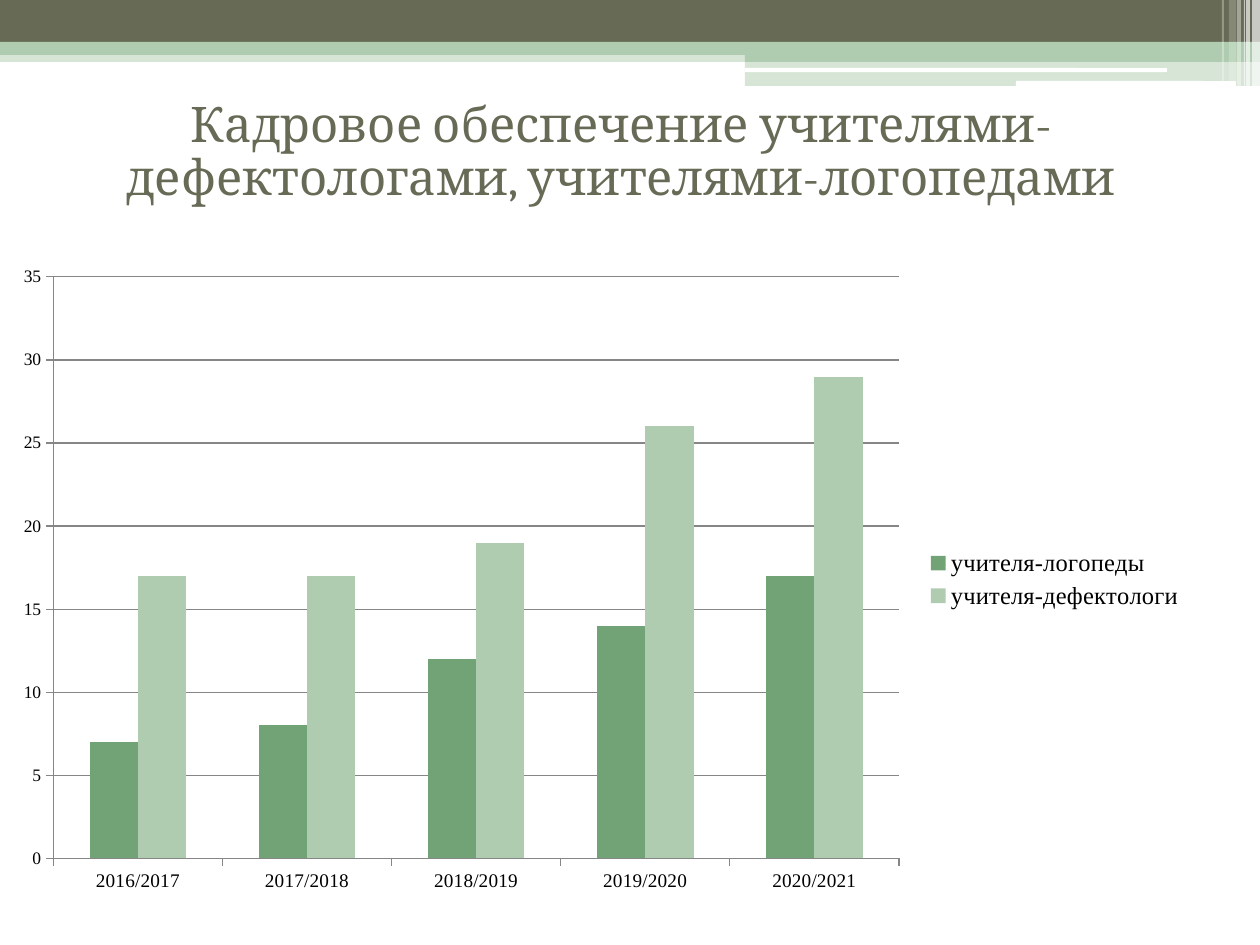
"""Build a slide with a banded header, a title and a column chart of teacher numbers."""
from dataclasses import dataclass

from lxml.etree import SubElement
from pptx import Presentation
from pptx.chart.data import CategoryChartData as ChartData
from pptx.dml.color import RGBColor as Color
from pptx.enum.chart import XL_CHART_TYPE as Kind, XL_LEGEND_POSITION as Side
from pptx.enum.chart import XL_TICK_MARK as Tick
from pptx.enum.shapes import MSO_SHAPE as Form
from pptx.enum.text import MSO_ANCHOR as Anchor, PP_ALIGN as Align
from pptx.oxml.ns import qn
from pptx.util import Emu, Pt


@dataclass(frozen=True)
class Theme:
    olive: str = "676A55"
    mint: str = "B0CCB0"
    green: str = "72A376"
    white: str = "FFFFFF"
    black: str = "000000"
    grey: str = "868686"
    head: str = "Cambria"
    body: str = "Times New Roman"
    title: int = 28
    legend: int = 14
    years: int = 11
    scale: int = 10


@dataclass(frozen=True)
class Band:
    x: int
    y: int
    w: int
    h: int
    color: str
    alpha: int = 100
    form: Form = Form.RECTANGLE


THEME = Theme()
BANDS = [
    Band(0, 50, 1260, 12, THEME.mint, 50),
    Band(0, 0, 1260, 42, THEME.olive),
    Band(0, 42, 1260, 13, THEME.mint),
    Band(745, 49, 515, 13, THEME.mint),
    Band(745, 61, 515, 25, THEME.mint, 50),
    Band(745, 68, 422, 4, THEME.white, form=Form.ROUNDED_RECTANGLE),
    Band(1016, 81, 220, 5, THEME.white, form=Form.ROUNDED_RECTANGLE),
    Band(1252, 0, 8, 86, THEME.white, 65),
    Band(1246, 0, 4, 86, THEME.white, 65),
    Band(1244, 0, 1, 86, THEME.white, 60),
    Band(1237, 0, 4, 86, THEME.white, 40),
    Band(1229, 0, 7, 81, THEME.white, 20),
    Band(1222, 0, 2, 81, THEME.white, 30),
]
YEARS = ["2016/2017", "2017/2018", "2018/2019", "2019/2020", "2020/2021"]
STAFF = [
    ("учителя-логопеды", [7, 8, 12, 14, 17], THEME.green),
    ("учителя-дефектологи", [17, 17, 19, 26, 29], THEME.mint),
]


def px(num: int) -> Emu:
    return Emu(round(num * 914400 / 126))


def style(font, name: str, size: int, color: str) -> None:
    font.name, font.size, font.bold = name, Pt(size), False
    font.color.rgb = Color.from_string(color)


def draw_band(slide, band: Band) -> None:
    shape = slide.shapes.add_shape(band.form, px(band.x), px(band.y), px(band.w), px(band.h))
    shape.shadow.inherit = False
    shape.line.fill.background()
    shape.fill.solid()
    shape.fill.fore_color.rgb = Color.from_string(band.color)
    if band.alpha < 100:
        tint = next(shape.element.iter(qn("a:srgbClr")))
        SubElement(tint, qn("a:alpha"), val=str(band.alpha * 1000))


def add_text(slide, text: str, *, x: int, y: int, w: int, h: int, font: str,
             size: int, color: str, lead: float = 1.0) -> None:
    frame = slide.shapes.add_textbox(px(x), px(y), px(w), px(h)).text_frame
    frame.word_wrap = True
    frame.vertical_anchor = Anchor.MIDDLE
    para = frame.paragraphs[0]
    para.alignment = Align.CENTER
    para.line_spacing = lead
    run = para.add_run()
    run.text = text
    style(run.font, font, size, color)


def set_line(line) -> None:
    line.color.rgb = Color.from_string(THEME.grey)
    line.width = Pt(0.75)


def set_axis(axis, size: int) -> None:
    axis.major_tick_mark, axis.minor_tick_mark = Tick.OUTSIDE, Tick.NONE
    style(axis.tick_labels.font, THEME.body, size, THEME.black)
    set_line(axis.format.line)


def draw_chart(slide, x: int, y: int, w: int, h: int) -> None:
    data = ChartData()
    data.categories = YEARS
    for name, vals, _ in STAFF:
        data.add_series(name, vals)
    chart = slide.shapes.add_chart(Kind.COLUMN_CLUSTERED, px(x), px(y), px(w), px(h), data).chart
    style(chart.font, THEME.head, THEME.scale, THEME.black)
    chart.has_title = False
    chart.has_legend = True
    chart.legend.position = Side.RIGHT
    chart.legend.include_in_layout = False
    style(chart.legend.font, THEME.body, THEME.legend, THEME.black)
    set_axis(chart.category_axis, THEME.years)
    axis = chart.value_axis
    set_axis(axis, THEME.scale)
    axis.minimum_scale, axis.maximum_scale, axis.major_unit = 0, 35, 5
    axis.has_major_gridlines = True
    set_line(axis.major_gridlines.format.line)
    plot = chart.plots[0]
    plot.gap_width, plot.overlap, plot.vary_by_categories = 150, 0, False
    for bars, (_, _, color) in zip(plot.series, STAFF):
        bars.format.fill.solid()
        bars.format.fill.fore_color.rgb = Color.from_string(color)


def main() -> None:
    deck = Presentation()
    deck.slide_width, deck.slide_height = px(1260), px(945)
    slide = deck.slides.add_slide(deck.slide_layouts[6])
    for band in BANDS:
        draw_band(slide, band)
    add_text(slide, "Кадровое обеспечение учителями-дефектологами, учителями-логопедами",
             x=54, y=79, w=1134, h=148, font=THEME.head, size=THEME.title,
             color=THEME.olive, lead=0.9)
    draw_chart(slide, 0, 254, 1197, 651)
    deck.save("out.pptx")


if __name__ == "__main__":
    main()
